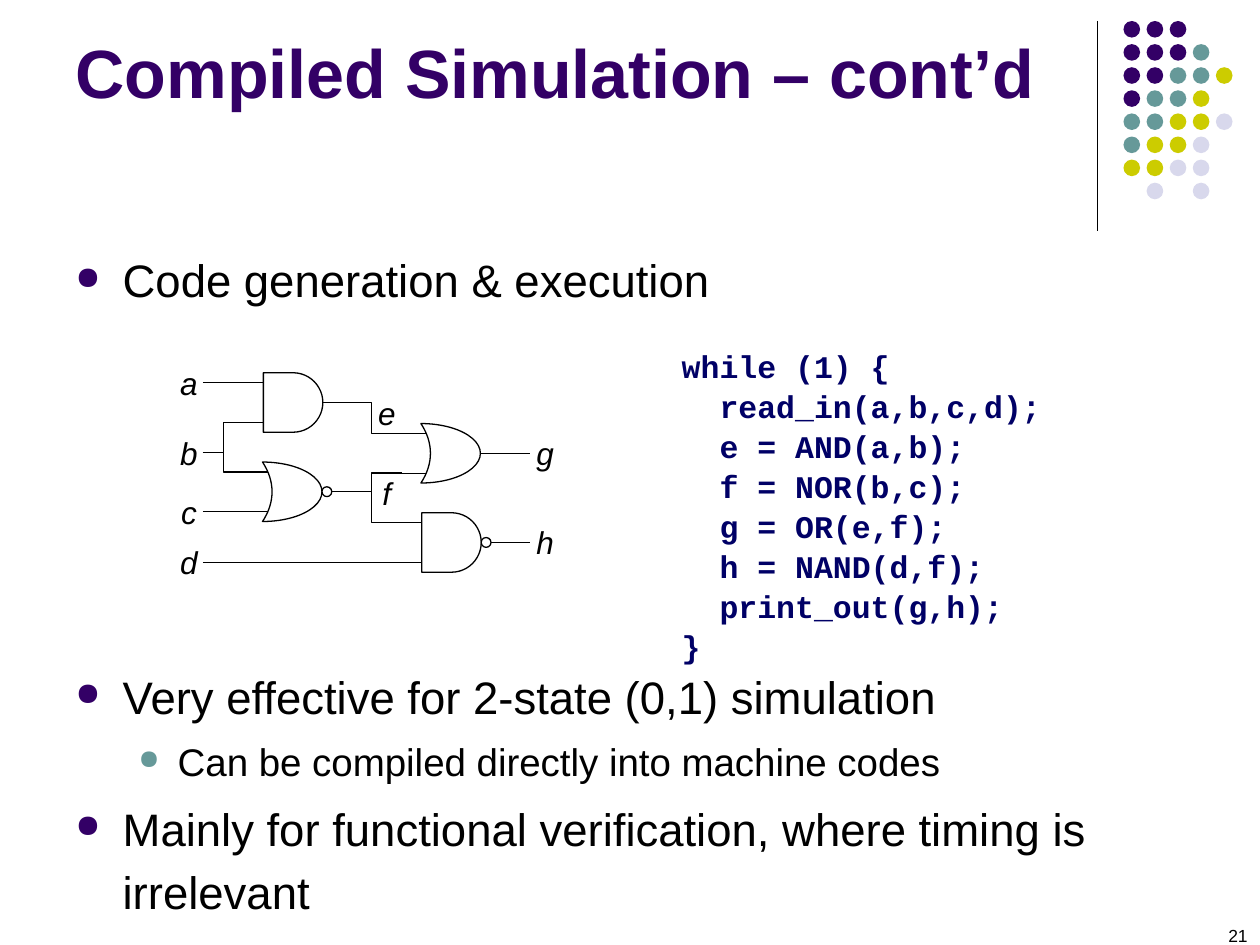
from lxml.etree import SubElement
from pptx import Presentation
from pptx.dml.color import RGBColor
from pptx.enum.shapes import MSO_CONNECTOR, MSO_SHAPE
from pptx.enum.text import MSO_ANCHOR, PP_ALIGN
from pptx.oxml.ns import qn
from pptx.util import Pt

PURPLE = RGBColor(0x33, 0x00, 0x66)
TEAL = RGBColor(0x66, 0x99, 0x99)
OLIVE = RGBColor(0xCC, 0xCC, 0x00)
LAVENDER = RGBColor(0xD8, 0xD8, 0xEC)
NAVY = RGBColor(0x00, 0x00, 0x66)
BLACK = RGBColor(0x00, 0x00, 0x00)
WHITE = RGBColor(0xFF, 0xFF, 0xFF)


def write(paragraph, text, size, color=BLACK, font="Arial", bold=False, italic=False,
          align=PP_ALIGN.LEFT, spacing=1.0, before=0, indent=0, hanging=0, bullet=None):
    """Fill a paragraph; bullet is the colour of its bullet, if it has one."""
    run = paragraph.add_run()
    run.text = text
    run.font.name = font
    run.font.size = Pt(size)
    run.font.bold = bold
    run.font.italic = italic
    run.font.color.rgb = color
    paragraph.alignment = align
    paragraph.line_spacing = spacing
    paragraph.space_before = Pt(before)
    properties = paragraph._p.get_or_add_pPr()
    properties.set("marL", str(Pt(indent)))
    properties.set("indent", str(-Pt(hanging)))
    if bullet is not None:
        bullet_color = SubElement(properties, qn("a:buClr"))
        SubElement(bullet_color, qn("a:srgbClr")).set("val", str(bullet))
        SubElement(properties, qn("a:buSzPct")).set("val", "70000")
        SubElement(properties, qn("a:buChar")).set("char", "●")


def add_wire(shapes, x1, y1, x2, y2):
    """Join two points, with an elbow where they differ in height."""
    kind = MSO_CONNECTOR.STRAIGHT if y1 == y2 else MSO_CONNECTOR.ELBOW
    wire = shapes.add_connector(kind, Pt(x1), Pt(y1), Pt(x2), Pt(y2))
    wire.line.color.rgb = BLACK
    wire.line.width = Pt(0.75)
    SubElement(wire._element.spPr, qn("a:effectLst"))


presentation = Presentation()
presentation.slide_width = Pt(720)
presentation.slide_height = Pt(540)
slide = presentation.slides.add_slide(presentation.slide_layouts[5])

# Corner decoration: a rule and a triangle of dots
add_wire(slide.shapes, 627, 12, 627, 132)
rule = slide.shapes[-1]
rule.end_y = Pt(132)
dot_colors = {"P": PURPLE, "T": TEAL, "O": OLIVE, "L": LAVENDER}
dot_rows = ["PPP", "PPPT", "PPTTO", "PTTO", "TTOOL", "TOOL", "OOLL", " L L"]
dots = slide.shapes.add_group_shape().shapes
for row, letters in enumerate(dot_rows):
    for column, letter in enumerate(letters):
        if letter in dot_colors:
            dot = dots.add_shape(MSO_SHAPE.OVAL, Pt(642 + 13.2 * column),
                                 Pt(12 + 13.2 * row), Pt(9.5), Pt(9.5))
            dot.shadow.inherit = False
            dot.fill.solid()
            dot.fill.fore_color.rgb = dot_colors[letter]
            dot.line.fill.background()

# Slide number
number_box = slide.shapes.add_textbox(Pt(552), Pt(525), Pt(168), Pt(15))
number_box.text_frame.word_wrap = True
write(number_box.text_frame.paragraphs[0], "21", 10, align=PP_ALIGN.RIGHT)

# Title
title = slide.shapes.title
title.left, title.top, title.width, title.height = Pt(36), Pt(9.4), Pt(594), Pt(102)
title.text_frame.vertical_anchor = MSO_ANCHOR.TOP
title.text_frame.margin_top = Pt(8)
write(title.text_frame.paragraphs[0], "Compiled Simulation – cont’d", 39, PURPLE, bold=True)

# Bullets, with room for the circuit and code after the first
body = slide.shapes.add_textbox(Pt(36), Pt(136), Pt(648), Pt(347)).text_frame
body.word_wrap = True
main = {"size": 26, "indent": 27, "hanging": 27, "bullet": PURPLE}
detail = {"size": 22, "indent": 58.5, "hanging": 22.5, "bullet": TEAL}
bullets = [
    ("Code generation & execution", 5, main),
    ("Very effective for 2-state (0,1) simulation", 202, main),
    ("Can be compiled directly into machine codes", 4.4, detail),
    ("Mainly for functional verification, where timing is irrelevant", 5, main),
]
for index, (text, before, style) in enumerate(bullets):
    paragraph = body.add_paragraph() if index else body.paragraphs[0]
    write(paragraph, text, before=before, spacing=1.15, **style)

# Logic circuit: each gate has two inputs, one output and perhaps a bubble
GATE = 34
UPPER, MIDDLE, LOWER = 5.7, 17, 28.4
AND, OR = MSO_SHAPE.FLOWCHART_DELAY, MSO_SHAPE.MOON
gates = [
    (OR, 240.5, 242, False),
    (AND, 150.5, 213, False),
    (AND, 241, 293, True),
    (OR, 150, 264, True),
]
circuit = slide.shapes.add_group_shape().shapes
for kind, left, top, inverted in gates:
    for pin in (UPPER, LOWER):
        add_wire(circuit, left - 11, top + pin, left + 11, top + pin)
    add_wire(circuit, left + 23, top + MIDDLE, left + 45, top + MIDDLE)
    parts = [circuit.add_shape(kind, Pt(left), Pt(top), Pt(GATE), Pt(GATE))]
    if kind == OR:
        parts[0].adjustments[0] = 0.84
        parts[0].rotation = 180
    if inverted:
        parts.append(circuit.add_shape(MSO_SHAPE.OVAL, Pt(left + GATE),
                                       Pt(top + MIDDLE - 2.8), Pt(5.6), Pt(5.6)))
    for part in parts:
        part.shadow.inherit = False
        part.fill.solid()
        part.fill.fore_color.rgb = WHITE
        part.line.color.rgb = BLACK
        part.line.width = Pt(0.75)

wires = [
    (116, 218.7, 139.5, 218.7),   # a to AND
    (116, 258.5, 139.5, 269.7),   # b to NOR
    (116, 258.5, 139.5, 241.4),   # b to AND
    (116, 292.4, 139.5, 292.4),   # c to NOR
    (116, 321.4, 230, 321.4),     # d to NAND
    (195.5, 230, 229.5, 247.7),   # e to OR
    (195, 281, 229.5, 270.4),     # f to OR
    (195, 281, 230, 298.7),       # f to NAND
    (285.5, 259, 303, 259),       # OR to g
    (286, 310, 303, 310),         # NAND to h
]
for wire_ends in wires:
    add_wire(circuit, *wire_ends)

signals = [
    ("a", 99.5, 207.5), ("b", 99.5, 247), ("c", 99.5, 281), ("d", 99.5, 309.5),
    ("e", 212.5, 224.5), ("f", 212.5, 270), ("g", 303, 247), ("h", 303, 298),
]
for name, left, top in signals:
    label = circuit.add_textbox(Pt(left), Pt(top), Pt(17), Pt(23)).text_frame
    label.margin_left = label.margin_right = label.margin_top = label.margin_bottom = 0
    label.vertical_anchor = MSO_ANCHOR.MIDDLE
    label.word_wrap = False
    write(label.paragraphs[0], name, 18, italic=True, align=PP_ALIGN.CENTER)

# Generated code; the loop body is indented by two characters
code = slide.shapes.add_textbox(Pt(382.5), Pt(191), Pt(255), Pt(181)).text_frame
code.word_wrap = True
code.margin_top = Pt(6)
statements = ["read_in(a,b,c,d);", "e = AND(a,b);", "f = NOR(b,c);", "g = OR(e,f);",
              "h = NAND(d,f);", "print_out(g,h);"]
for index, text in enumerate(["while (1) {", *statements, "}"]):
    paragraph = code.add_paragraph() if index else code.paragraphs[0]
    write(paragraph, text, 18, NAVY, font="Courier New", bold=True, spacing=1.06,
          indent=21.6 if text in statements else 0)

presentation.save("out.pptx")
